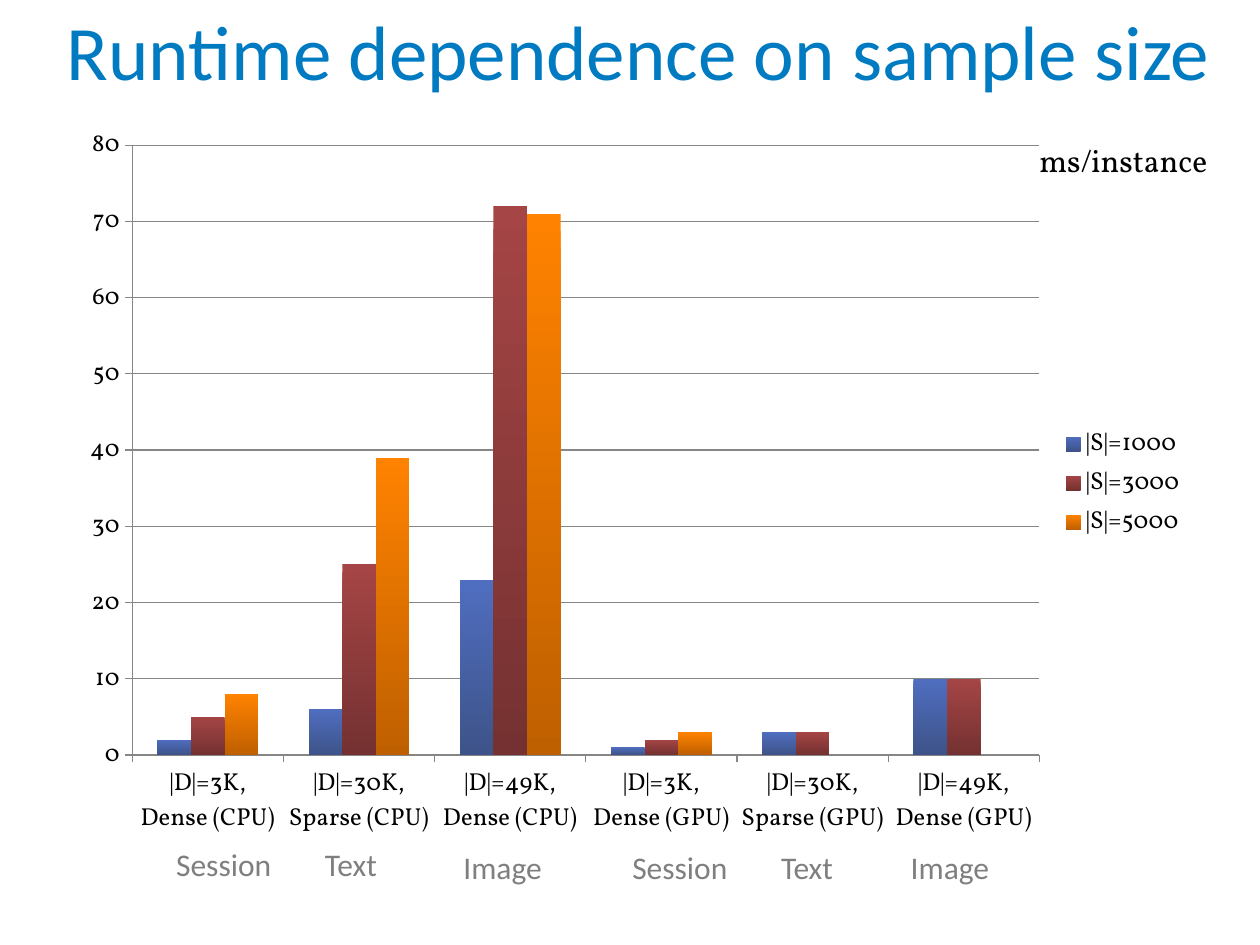
from lxml import etree
from pptx import Presentation
from pptx.chart.data import CategoryChartData
from pptx.dml.color import RGBColor
from pptx.enum.chart import XL_CHART_TYPE, XL_LEGEND_POSITION, XL_TICK_MARK
from pptx.enum.text import MSO_ANCHOR, MSO_AUTO_SIZE, PP_ALIGN
from pptx.oxml.ns import qn
from pptx.util import Inches, Pt

COLUMNS = XL_CHART_TYPE.COLUMN_CLUSTERED
LEGEND_RIGHT = XL_LEGEND_POSITION.RIGHT
TICK_OUT, TICK_NONE = XL_TICK_MARK.OUTSIDE, XL_TICK_MARK.NONE
BOTTOM, LEFT = MSO_ANCHOR.BOTTOM, PP_ALIGN.LEFT
FIT_TEXT, NO_FIT = MSO_AUTO_SIZE.SHAPE_TO_FIT_TEXT, MSO_AUTO_SIZE.NONE

SANS, SERIF = "Calibri", "Vollkorn"
BLUE, BLACK, GRAY, GRID = "007BC2", "000000", "7F7F7F", "868686"

DATASETS = ["|D|=3K, Dense", "|D|=30K, Sparse", "|D|=49K, Dense"]
CATEGORIES = [f"{dataset} ({unit})" for unit in ("CPU", "GPU") for dataset in DATASETS]
# Sample size, runtimes, gradient from top to bottom
RUNTIMES = [
    ("|S|=1000", [2, 6, 23, 1, 3, 10], ("506EC0", "3D5389")),
    ("|S|=3000", [5, 25, 72, 2, 3, 10], ("A54545", "753131")),
    ("|S|=5000", [8, 39, 71, 3, None, None], ("FF8200", "BF6000")),
]
# Dataset label, width, top under CPU, left under CPU and under GPU
DATASET_LABELS = [
    ("Session", 0.96, 6.66, 1.3, 4.92),
    ("Text", 0.62, 6.66, 2.48, 6.1),
    ("Image", 0.83, 6.68, 3.58, 7.13),
]
GPU_LABEL_TOP = 6.68


def rgb(color):
    return RGBColor.from_string(color)


def style_font(font, size, name, color):
    font.size = Pt(size)
    font.name = name
    font.color.rgb = rgb(color)


def add_run(paragraph, text, size, name, color):
    run = paragraph.add_run()
    run.text = text
    style_font(run.font, size, name, color)


def set_title(slide, text):
    title = slide.shapes.title
    title.left, title.top = Inches(0.43), Inches(0.01)
    title.width, title.height = Inches(9.37), Inches(0.8)
    frame = title.text_frame
    frame.vertical_anchor = BOTTOM
    frame.auto_size = NO_FIT
    paragraph = frame.paragraphs[0]
    paragraph.alignment = LEFT
    paragraph.line_spacing = Pt(58)
    add_run(paragraph, text, 44, SANS, BLUE)


def add_label(slide, text, left, top, width, name, color, wrap=False):
    label = slide.shapes.add_textbox(Inches(left), Inches(top), Inches(width), Inches(0.4))
    frame = label.text_frame
    frame.word_wrap = wrap
    frame.auto_size = FIT_TEXT
    add_run(frame.paragraphs[0], text, 18, name, color)


def style_axis(axis):
    axis.major_tick_mark = TICK_OUT
    axis.minor_tick_mark = TICK_NONE
    axis.format.line.color.rgb = rgb(GRID)
    style_font(axis.tick_labels.font, 14, SERIF, BLACK)


def place_plot(chart, **fractions):
    """Fix the inner plot area as fractions of the chart frame."""
    plot_area = chart.plots[0]._element.getparent()
    for old_layout in plot_area.findall(qn("c:layout")):
        plot_area.remove(old_layout)
    layout = etree.Element(qn("c:layout"))
    plot_area.insert(0, layout)
    manual = etree.SubElement(layout, qn("c:manualLayout"))
    settings = {"layoutTarget": "inner", "xMode": "edge", "yMode": "edge", **fractions}
    for tag, value in settings.items():
        etree.SubElement(manual, qn(f"c:{tag}")).set("val", str(value))


def add_runtime_chart(slide):
    data = CategoryChartData()
    data.categories = CATEGORIES
    for sample_size, runtimes, _ in RUNTIMES:
        data.add_series(sample_size, runtimes)
    chart = slide.shapes.add_chart(
        COLUMNS, Inches(0.51), Inches(0.92), Inches(9), Inches(5.83), data
    ).chart
    chart.has_title = False
    style_font(chart.font, 10, SERIF, BLACK)

    # Columns
    plot = chart.plots[0]
    plot.gap_width = 150
    plot.overlap = 0
    plot.vary_by_categories = False
    for series, (_, _, shades) in zip(plot.series, RUNTIMES):
        fill = series.format.fill
        fill.gradient()
        fill.gradient_angle = 270
        for stop, shade in zip(fill.gradient_stops, shades):
            stop.color.rgb = rgb(shade)

    # Axes and legend
    for axis in (chart.category_axis, chart.value_axis):
        style_axis(axis)
    runtime_axis = chart.value_axis
    runtime_axis.minimum_scale, runtime_axis.maximum_scale = 0, 80
    runtime_axis.major_unit = 10
    runtime_axis.has_major_gridlines = True
    runtime_axis.major_gridlines.format.line.color.rgb = rgb(GRID)
    chart.has_legend = True
    chart.legend.position = LEGEND_RIGHT
    chart.legend.include_in_layout = False
    style_font(chart.legend.font, 14, SERIF, BLACK)
    place_plot(chart, x=0.06, y=0.04, w=0.8, h=0.83)


def main():
    prs = Presentation()
    prs.slide_width, prs.slide_height = Inches(10), Inches(7.5)
    slide = prs.slides.add_slide(prs.slide_layouts[5])

    set_title(slide, "Runtime dependence on sample size")
    add_label(slide, "ms/instance", 8.15, 1.07, 1.73, SERIF, BLACK, wrap=True)
    add_runtime_chart(slide)

    # Dataset names under the CPU and GPU groups
    for text, width, cpu_top, cpu_left, gpu_left in DATASET_LABELS:
        add_label(slide, text, cpu_left, cpu_top, width, SANS, GRAY)
        add_label(slide, text, gpu_left, GPU_LABEL_TOP, width, SANS, GRAY)

    prs.save("out.pptx")


if __name__ == "__main__":
    main()
